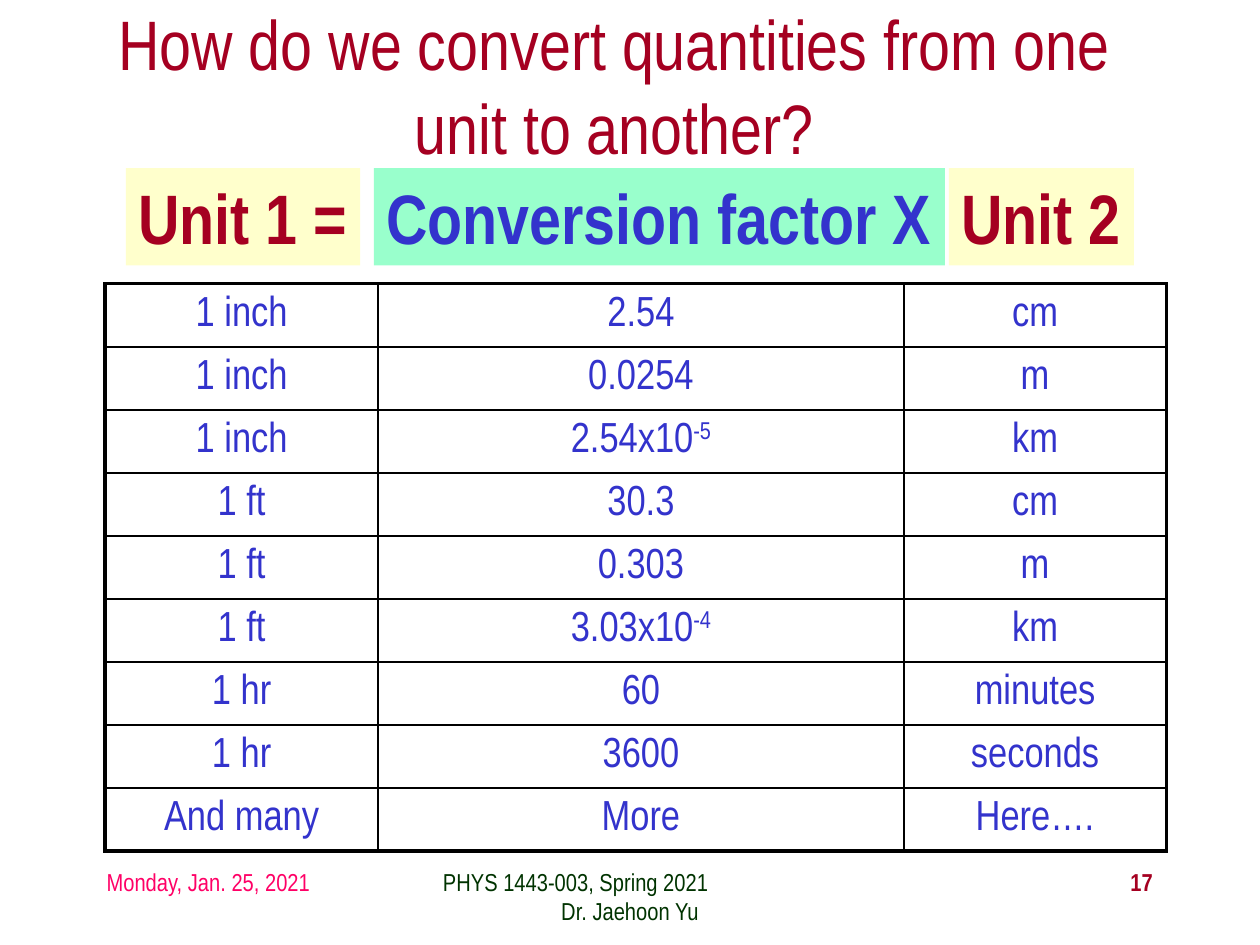
import pptx
import pptx.util
import pptx.dml.color
import pptx.enum.shapes
import pptx.enum.text
import pptx.oxml.ns
import lxml.etree

Cm = pptx.util.Cm
Pt = pptx.util.Pt
align = pptx.enum.text.PP_ALIGN
anchor = pptx.enum.text.MSO_ANCHOR
fit = pptx.enum.text.MSO_AUTO_SIZE
qn = pptx.oxml.ns.qn
tone = {"red": "A50021", "blue": "3333CC", "pink": "FF0066", "green": "003300",
        "cream": "FFFFCC", "mint": "99FFCC", "black": "000000"}


def style(para, size, color, side, bold=False):
    para.alignment = side
    for run in para.runs:
        run.font.name = "Arial Narrow"
        run.font.size = Pt(size)
        run.font.bold = bold
        run.font.color.rgb = pptx.dml.color.RGBColor.from_string(tone[color])


def edge(cell, side, width):
    line = lxml.etree.SubElement(cell._tc.get_or_add_tcPr(), qn("a:ln" + side), w=str(Pt(width)))
    fill = lxml.etree.SubElement(line, qn("a:solidFill"))
    lxml.etree.SubElement(fill, qn("a:srgbClr"), val=tone["black"])


deck = pptx.Presentation()
deck.slide_width = Cm(25.4)
deck.slide_height = Cm(19.05)
slide = deck.slides.add_slide(deck.slide_layouts[5])

title = slide.shapes.title
title.left, title.top, title.width, title.height = Cm(1.9), Cm(0), Cm(20.96), Cm(3.39)
title.text_frame.text = "How do we convert quantities from one unit to another?"
title.text_frame.auto_size = fit.NONE
title.text_frame.vertical_anchor = anchor.MIDDLE
style(title.text_frame.paragraphs[0], 40, "red", align.CENTER)

foot = [
    (1.9, 5.29, "Monday, Jan. 25, 2021", "pink", [align.LEFT], False),
    (8.68, 8.04, "PHYS 1443-003, Spring 2021\nDr. Jaehoon Yu", "green",
     [align.LEFT, align.CENTER], False),
    (18.2, 5.29, "17", "red", [align.RIGHT], True),
]
for left, width, text, color, sides, bold in foot:
    box = slide.shapes.add_textbox(Cm(left), Cm(17.35), Cm(width), Cm(1.27))
    box.text_frame.word_wrap = True
    box.text_frame.text = text
    for para, side in zip(box.text_frame.paragraphs, sides):
        style(para, 14, color, side, bold)

heads = [
    (2.54, 4.72, "Unit 1 =", "cream", "red"),
    (19.13, 3.73, "Unit 2", "cream", "red"),
    (7.54, 11.51, "Conversion factor X", "mint", "blue"),
]
for left, width, text, back, color in heads:
    head = slide.shapes.add_shape(pptx.enum.shapes.MSO_SHAPE.RECTANGLE,
                                  Cm(left), Cm(3.39), Cm(width), Cm(1.96))
    head.shadow.inherit = False
    head.fill.solid()
    head.fill.fore_color.rgb = pptx.dml.color.RGBColor.from_string(tone[back])
    head.line.fill.background()
    frame = head.text_frame
    frame.text = text
    frame.word_wrap = False
    frame.auto_size = fit.SHAPE_TO_FIT_TEXT
    frame.vertical_anchor = anchor.TOP
    style(frame.paragraphs[0], 40, color, align.LEFT, True)

rows = [
    ("1 inch", "2.54", "cm"),
    ("1 inch", "0.0254", "m"),
    ("1 inch", "2.54x10^-5", "km"),
    ("1 ft", "30.3", "cm"),
    ("1 ft", "0.303", "m"),
    ("1 ft", "3.03x10^-4", "km"),
    ("1 hr", "60", "minutes"),
    ("1 hr", "3600", "seconds"),
    ("And many", "More", "Here…."),
]
wides = [5.5, 10.6, 5.29]
high = 1.27
grid = slide.shapes.add_table(len(rows), len(wides), Cm(2.12), Cm(5.72),
                              Cm(sum(wides)), Cm(high * len(rows))).table
grid.first_row = False
grid.horz_banding = False
for col, wide in zip(grid.columns, wides):
    col.width = Cm(wide)
for r, row in enumerate(rows):
    grid.rows[r].height = Cm(high)
    for c, text in enumerate(row):
        cell = grid.cell(r, c)
        outer = {"L": c == 0, "R": c == len(wides) - 1, "T": r == 0, "B": r == len(rows) - 1}
        for side, thick in outer.items():
            edge(cell, side, 2.25 if thick else 1)
        cell.fill.background()
        cell.vertical_anchor = anchor.MIDDLE
        base, mark, power = text.partition("^")
        para = cell.text_frame.paragraphs[0]
        para.text = base
        if mark:
            run = para.add_run()
            run.text = power
            run._r.get_or_add_rPr().set("baseline", "30000")
        style(para, 24, "blue", align.CENTER)

deck.save("out.pptx")
